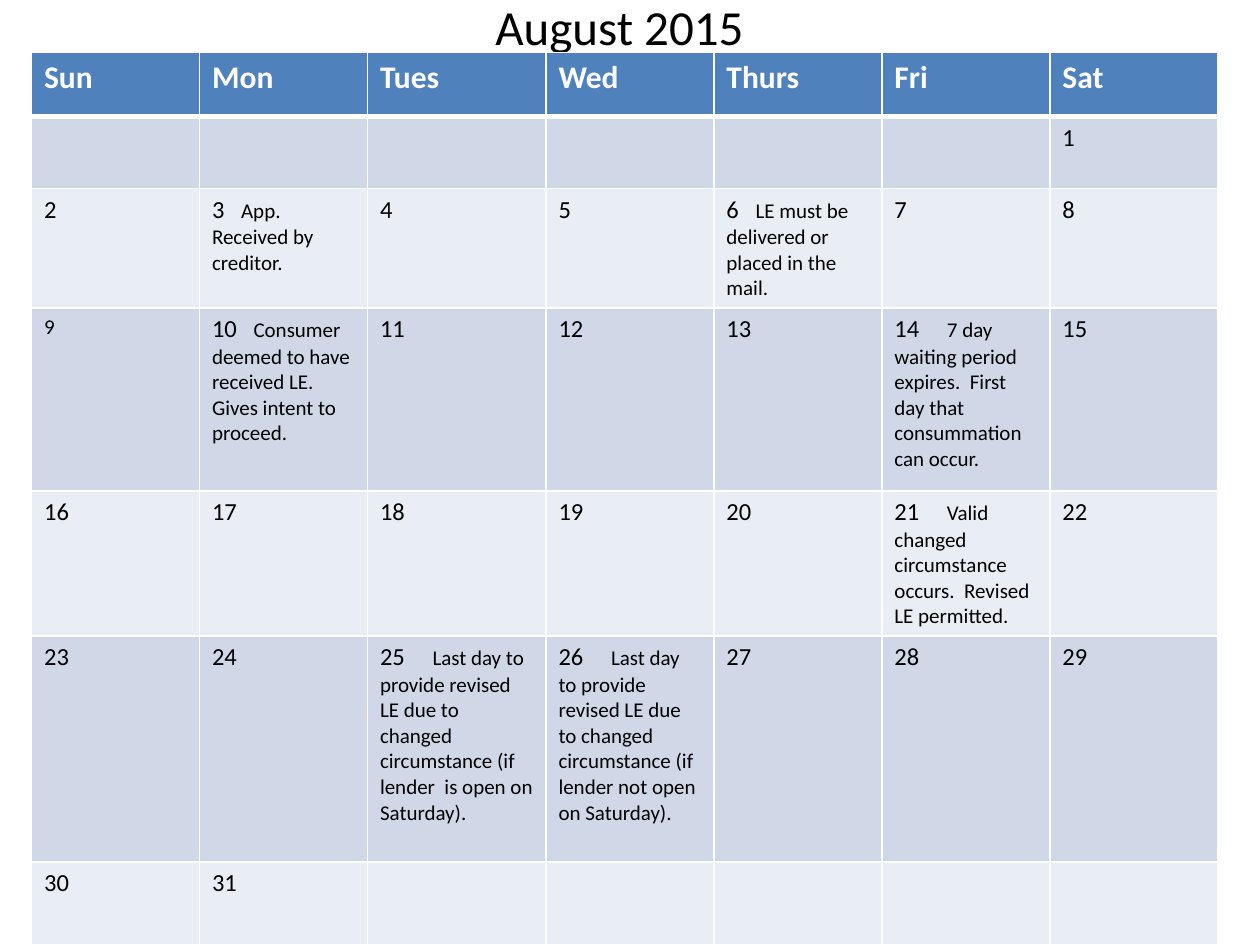
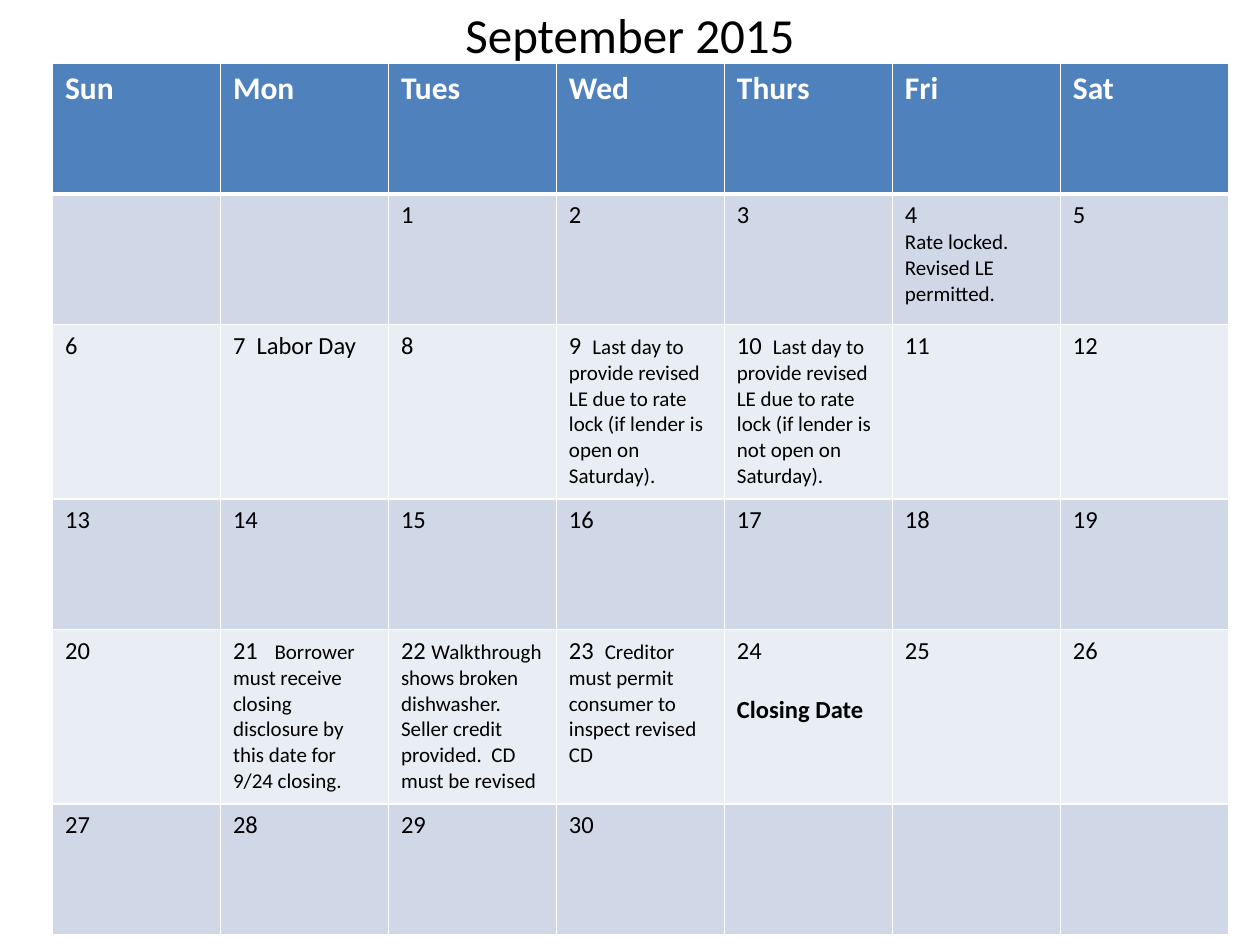
from dataclasses import dataclass, field

from lxml import etree
from pptx import Presentation
from pptx.dml.color import RGBColor
from pptx.enum.text import MSO_ANCHOR, PP_ALIGN
from pptx.oxml.ns import qn
from pptx.util import Pt

MIDDLE = MSO_ANCHOR.MIDDLE
CENTER = PP_ALIGN.CENTER
FONT = "Calibri"
COLORS = {
    "text": "000000",
    "header": "4F81BD",
    "header_text": "FFFFFF",
    "border": "FFFFFF",
    "odd_week": "D0D8E8",
    "even_week": "E9EDF4",
}
WEEKDAYS = ("Sun", "Mon", "Tues", "Wed", "Thurs", "Fri", "Sat")
TITLE_SIZE, HEADER_SIZE, DAY_SIZE, NOTE_SIZE = 28, 18, 14, 12
THIN, THICK = 1, 3


@dataclass(frozen=True)
class Note:
    text: str
    tab: float = 0
    size: int = NOTE_SIZE
    bold: bool = False
    own_line: bool = False
    space_before: float = 0


@dataclass(frozen=True)
class Month:
    title: str
    title_box: tuple[float, float, float, float]
    table_box: tuple[float, float, float, float]
    column_widths: list[float]
    row_heights: list[float]
    first_weekday: int
    day_count: int
    notes: dict[int, Note]
    day_sizes: dict[int, int] = field(default_factory=dict)


MONTHS = [
    Month(
        title="August 2015",
        title_box=(30, 0, 648, 30),
        table_box=(18, 30, 678, 510),
        column_widths=[96, 96, 102, 96, 96, 96, 96],
        row_heights=[36.6, 41.1, 68.4, 104.6, 82.8, 129, 47.5],
        first_weekday=6,
        day_count=31,
        day_sizes={9: NOTE_SIZE},
        notes={
            3: Note("App. Received by creditor.", 16.6),
            6: Note("LE must be delivered or placed in the mail.", 16.6),
            10: Note("Consumer deemed to have received LE. Gives intent to proceed.", 23.7),
            14: Note("7 day waiting period expires.  First day that consummation can occur.", 30),
            21: Note("Valid changed circumstance occurs.  Revised LE permitted.", 30),
            25: Note("Last day to provide revised LE due to changed circumstance "
                     "(if lender  is open on Saturday).", 30),
            26: Note("Last day to provide revised LE due to changed circumstance "
                     "(if lender not open on Saturday).", 30),
        },
    ),
    Month(
        title="September 2015",
        title_box=(36, 3, 648, 33),
        table_box=(30, 36, 672, 498),
        column_widths=[96] * 7,
        row_heights=[74.8, 74.8, 99.5, 74.8, 99.5, 74.8],
        first_weekday=2,
        day_count=30,
        notes={
            4: Note("Rate locked.  Revised LE permitted.", own_line=True),
            7: Note("Labor Day", 13.4, size=DAY_SIZE),
            9: Note("Last day to provide revised LE due to rate lock "
                    "(if lender is open on Saturday).", 13.4),
            10: Note("Last day to provide revised LE due to rate lock "
                     "(if lender is not open on Saturday).", 20.5),
            21: Note("Borrower must receive closing disclosure by this date "
                     "for 9/24 closing.", 23.7),
            22: Note("Walkthrough shows broken dishwasher.  Seller credit provided.  "
                     "CD must be revised"),
            23: Note("Creditor must permit consumer to inspect revised CD", 20.5),
            24: Note("Closing Date", size=DAY_SIZE, bold=True, own_line=True,
                     space_before=17),
        },
    ),
]


def write_text(paragraph, text: str, *, size: float, color: str = "text",
               bold: bool = False) -> None:
    run = paragraph.add_run()
    run.text = text
    run.font.name = FONT
    run.font.size = Pt(size)
    run.font.bold = bold
    run.font.color.rgb = RGBColor.from_string(COLORS[color])


def set_tab_stop(paragraph, position: float) -> None:
    properties = paragraph._p.get_or_add_pPr()
    tab_list = etree.SubElement(properties, qn("a:tabLst"))
    etree.SubElement(tab_list, qn("a:tab"), pos=str(Pt(position)), algn="l")


def style_cell(cell, row: int) -> None:
    properties = cell._tc.get_or_add_tcPr()
    widths = {
        "L": THIN,
        "R": THIN,
        "T": THICK if row == 1 else THIN,
        "B": THICK if row == 0 else THIN,
    }
    for side, width in widths.items():
        line = etree.SubElement(properties, qn(f"a:ln{side}"), w=str(Pt(width)))
        fill = etree.SubElement(line, qn("a:solidFill"))
        etree.SubElement(fill, qn("a:srgbClr"), val=COLORS["border"])
    name = "header" if row == 0 else "odd_week" if row % 2 else "even_week"
    cell.fill.solid()
    cell.fill.fore_color.rgb = RGBColor.from_string(COLORS[name])


def write_day(cell, day: int, month: Month) -> None:
    frame = cell.text_frame
    paragraph = frame.paragraphs[0]
    note = month.notes.get(day)
    gap = ""
    if note and not note.own_line:
        gap = "\t" if note.tab else " "
    write_text(paragraph, f"{day}{gap}", size=month.day_sizes.get(day, DAY_SIZE))
    if note is None:
        return
    if note.tab:
        set_tab_stop(paragraph, note.tab)
    if note.own_line:
        paragraph = frame.add_paragraph()
        paragraph.space_before = Pt(note.space_before)
    write_text(paragraph, note.text, size=note.size, bold=note.bold)


def add_title(slide, month: Month) -> None:
    frame = slide.shapes.add_textbox(*map(Pt, month.title_box)).text_frame
    frame.word_wrap = True
    frame.vertical_anchor = MIDDLE
    paragraph = frame.paragraphs[0]
    paragraph.alignment = CENTER
    write_text(paragraph, month.title, size=TITLE_SIZE)


def add_calendar(slide, month: Month) -> None:
    table = slide.shapes.add_table(
        len(month.row_heights), len(WEEKDAYS), *map(Pt, month.table_box)
    ).table
    table.horz_banding = False
    for column, width in zip(table.columns, month.column_widths):
        column.width = Pt(width)
    for row, height in zip(table.rows, month.row_heights):
        row.height = Pt(height)
    for index, cell in enumerate(table.iter_cells()):
        row, weekday = divmod(index, len(WEEKDAYS))
        style_cell(cell, row)
        day = (row - 1) * len(WEEKDAYS) + weekday - month.first_weekday + 1
        if row == 0:
            write_text(cell.text_frame.paragraphs[0], WEEKDAYS[weekday],
                       size=HEADER_SIZE, color="header_text", bold=True)
        elif 1 <= day <= month.day_count:
            write_day(cell, day, month)


def main() -> None:
    presentation = Presentation()
    presentation.slide_width = Pt(720)
    presentation.slide_height = Pt(540)
    blank_layout = presentation.slide_layouts[6]
    for month in MONTHS:
        slide = presentation.slides.add_slide(blank_layout)
        add_title(slide, month)
        add_calendar(slide, month)
    presentation.save("out.pptx")


if __name__ == "__main__":
    main()
